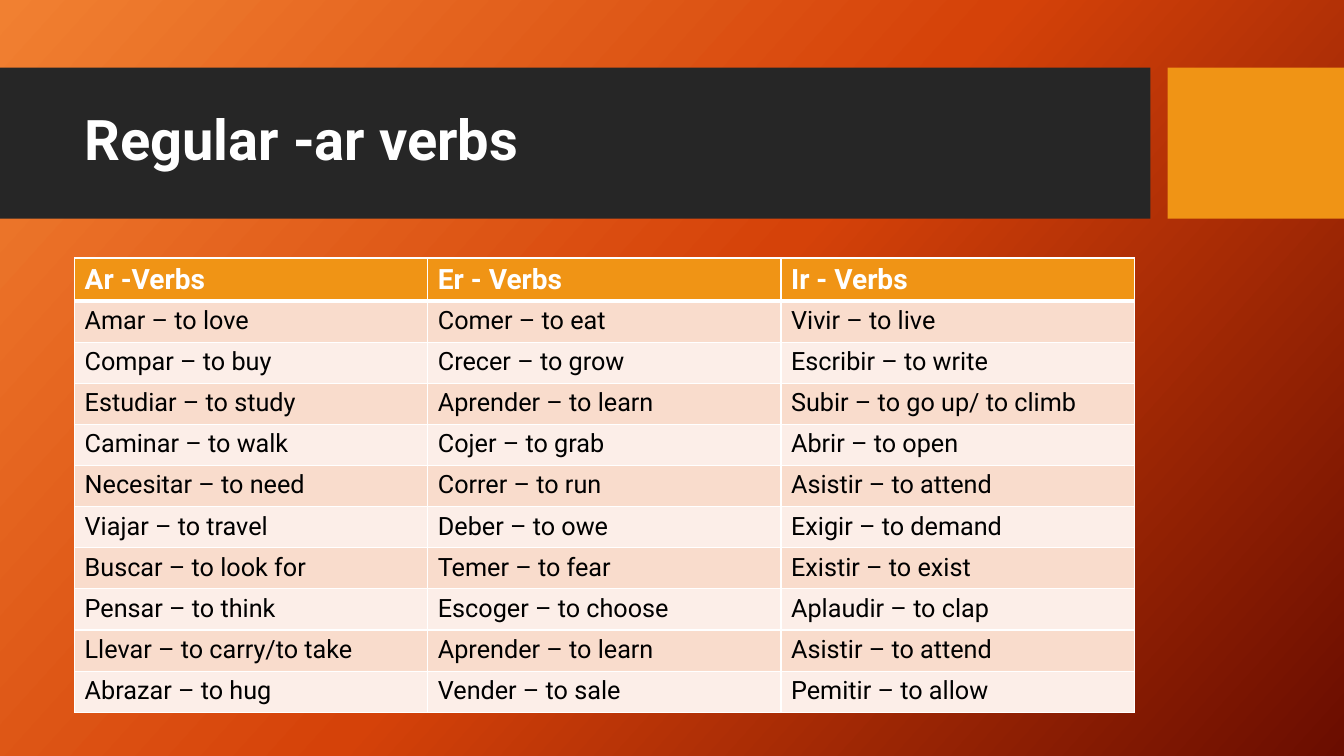
from copy import deepcopy
from dataclasses import dataclass

from lxml import etree
from pptx import Presentation
from pptx.dml.color import RGBColor
from pptx.enum.shapes import MSO_SHAPE
from pptx.enum.text import MSO_ANCHOR, MSO_AUTO_SIZE, PP_ALIGN
from pptx.oxml.ns import qn
from pptx.util import Inches, Pt


@dataclass(frozen=True)
class Theme:
    font: str = "Roboto"
    white: str = "FFFFFF"
    black: str = "000000"
    band: str = "262626"
    accent: str = "F09415"
    rows: tuple = ("F9DCCC", "FCEEE8")
    background: tuple = ((0, "F18031"), (0.5, "D54209"), (1, "6A0D00"))
    title_size: int = 40
    header_size: int = 20
    body_size: int = 18


THEME = Theme()
VERBS = [
    ("Ar -Verbs", "Er - Verbs", "Ir - Verbs"),
    ("Amar – to love", "Comer – to eat", "Vivir – to live"),
    ("Compar – to buy", "Crecer – to grow", "Escribir – to write"),
    ("Estudiar – to study", "Aprender – to learn", "Subir – to go up/ to climb"),
    ("Caminar – to walk", "Cojer – to grab", "Abrir – to open"),
    ("Necesitar – to need", "Correr – to run", "Asistir – to attend"),
    ("Viajar – to travel", "Deber – to owe", "Exigir – to demand"),
    ("Buscar – to look for", "Temer – to fear", "Existir – to exist"),
    ("Pensar – to think", "Escoger – to choose", "Aplaudir – to clap"),
    ("Llevar – to carry/to take", "Aprender – to learn", "Asistir – to attend"),
    ("Abrazar – to hug", "Vender – to sale", "Pemitir – to allow"),
]


def add_run(paragraph, text, size, color, bold):
    run = paragraph.add_run()
    run.text = text
    run.font.name = THEME.font
    run.font.size = Pt(size)
    run.font.bold = bold
    run.font.color.rgb = RGBColor.from_string(color)


def add_border(cell, side, width):
    line = etree.SubElement(cell._tc.get_or_add_tcPr(), qn(f"a:ln{side}"), w=str(Pt(width)))
    fill = etree.SubElement(line, qn("a:solidFill"))
    etree.SubElement(fill, qn("a:srgbClr"), val=THEME.white)


presentation = Presentation()
presentation.slide_width = Inches(13.33)
presentation.slide_height = Inches(7.5)
slide = presentation.slides.add_slide(presentation.slide_layouts.get_by_name("Title Only"))

# Background gradient with three stops
background = slide.background.fill
background.gradient()
background.gradient_angle = 360 - 42
stop_list = slide.element.find(".//" + qn("a:gsLst"))
stop_list.append(deepcopy(stop_list[-1]))
for stop, (position, color) in zip(background.gradient_stops, THEME.background):
    stop.position = position
    stop.color.rgb = RGBColor.from_string(color)

# Title on its dark band, with the accent block beside it
title = slide.shapes.title
for left, width, color in ((0, 11.41, THEME.band), (11.58, 1.75, THEME.accent)):
    block = slide.shapes.add_shape(
        MSO_SHAPE.RECTANGLE, Inches(left), Inches(0.67), Inches(width), Inches(1.5))
    block.shadow.inherit = False
    block.fill.solid()
    block.fill.fore_color.rgb = RGBColor.from_string(color)
    block.line.fill.background()
    title.element.addprevious(block.element)

title.left, title.top = Inches(0.74), Inches(0.82)
title.width, title.height = Inches(10.51), Inches(1.18)
title.text_frame.vertical_anchor = MSO_ANCHOR.MIDDLE
title.text_frame.auto_size = MSO_AUTO_SIZE.NONE
heading = title.text_frame.paragraphs[0]
heading.alignment = PP_ALIGN.LEFT
heading.line_spacing = 0.9
add_run(heading, "Regular -ar verbs", THEME.title_size, THEME.white, True)

# Verb table
table = slide.shapes.add_table(
    len(VERBS), len(VERBS[0]), Inches(0.74), Inches(2.56), Inches(10.51), Inches(4.49)).table
for row, verbs in enumerate(VERBS):
    is_header = row == 0
    for column, verb in enumerate(verbs):
        cell = table.cell(row, column)
        add_border(cell, "L", 1)
        add_border(cell, "R", 1)
        add_border(cell, "T", 3 if row == 1 else 1)
        add_border(cell, "B", 3 if is_header else 1)
        cell.fill.solid()
        cell.fill.fore_color.rgb = RGBColor.from_string(
            THEME.accent if is_header else THEME.rows[(row - 1) % 2])
        add_run(cell.text_frame.paragraphs[0], verb,
                THEME.header_size if is_header else THEME.body_size,
                THEME.white if is_header else THEME.black, is_header)

presentation.save("out.pptx")
